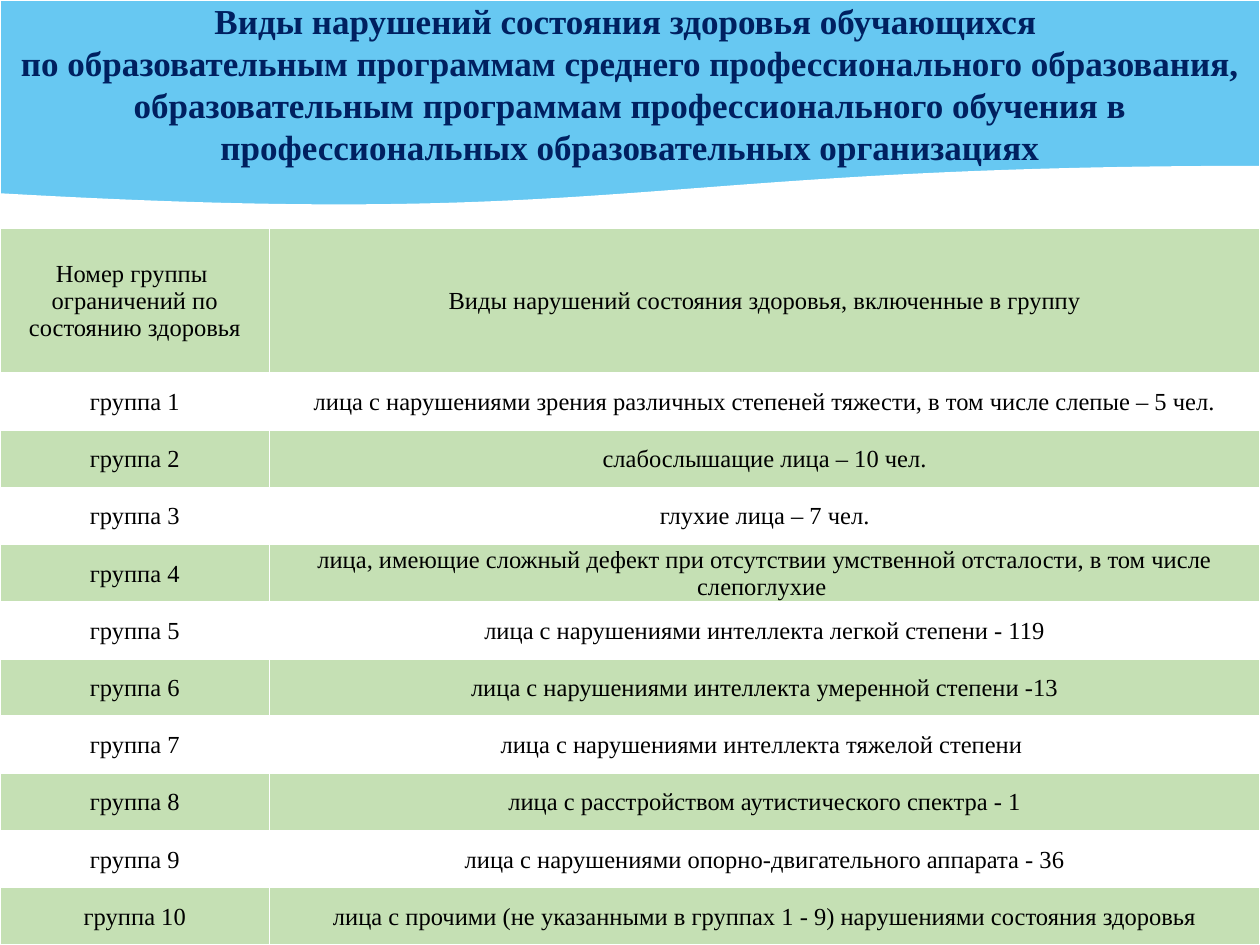
from lxml import etree
from pptx import Presentation
from pptx.dml.color import RGBColor
from pptx.enum.shapes import MSO_SHAPE
from pptx.enum.text import MSO_ANCHOR, MSO_AUTO_SIZE, PP_ALIGN
from pptx.oxml.ns import qn
from pptx.util import Inches, Pt

WAVE = MSO_SHAPE.FLOWCHART_DOCUMENT
MIDDLE = MSO_ANCHOR.MIDDLE
CENTER = PP_ALIGN.CENTER
NO_FIT = MSO_AUTO_SIZE.NONE
COLORS = {"sky": "67C8F2", "navy": "002060", "green": "C5E0B4",
          "white": "FFFFFF", "black": "000000"}
FONT = "Times New Roman"

HEADING = [
    "Виды нарушений состояния здоровья обучающихся ",
    "по образовательным программам среднего профессионального образования, "
    "образовательным программам профессионального обучения в "
    "профессиональных образовательных организациях",
]
HEADER = [
    ["Номер группы ", "ограничений по состоянию здоровья"],
    ["Виды нарушений состояния здоровья, включенные в группу"],
]
IMPAIRMENTS = [
    "лица с нарушениями зрения различных степеней тяжести, в том числе слепые – 5 чел.",
    "слабослышащие лица – 10 чел.",
    "глухие лица – 7 чел.",
    "лица, имеющие сложный дефект при отсутствии умственной отсталости, "
    "в том числе слепоглухие ",
    "лица с нарушениями интеллекта легкой степени - 119",
    "лица с нарушениями интеллекта умеренной степени -13",
    "лица с нарушениями интеллекта тяжелой степени ",
    "лица с расстройством аутистического спектра - 1",
    "лица с нарушениями опорно-двигательного аппарата - 36",
    "лица с прочими (не указанными в группах 1 - 9) нарушениями состояния здоровья",
]


def write(frame, lines, size, color, bold=False):
    """Fill a text frame with centred paragraphs, one per line."""
    for index, line in enumerate(lines):
        paragraph = frame.paragraphs[0] if index == 0 else frame.add_paragraph()
        paragraph.alignment = CENTER
        run = paragraph.add_run()
        run.text = line
        run.font.name = FONT
        run.font.size = Pt(size)
        run.font.bold = bold
        run.font.color.rgb = RGBColor.from_string(COLORS[color])


def add_borders(cell, color, width):
    properties = cell._tc.get_or_add_tcPr()
    for side in ("a:lnL", "a:lnR", "a:lnT", "a:lnB"):
        line = etree.SubElement(properties, qn(side), w=str(Pt(width)))
        fill = etree.SubElement(line, qn("a:solidFill"))
        etree.SubElement(fill, qn("a:srgbClr"), val=COLORS[color])


prs = Presentation()
prs.slide_width, prs.slide_height = Inches(10), Inches(7.5)
slide = prs.slides.add_slide(prs.slide_layouts[5])

# Wavy band, placed behind the title
band = slide.shapes.add_shape(WAVE, 0, 0, Inches(10), Inches(1.65))
band.shadow.inherit = False
band.fill.solid()
band.fill.fore_color.rgb = RGBColor.from_string(COLORS["sky"])
band.line.color.rgb = RGBColor.from_string(COLORS["white"])
band.line.width = Pt(1)
title = slide.shapes.title
title._element.addprevious(band._element)

# Title fills the part of the band above the wave
title.left, title.top, title.width, title.height = 0, 0, Inches(10), Inches(1.32)
heading = title.text_frame
heading.word_wrap = True
heading.auto_size = NO_FIT
heading.vertical_anchor = MIDDLE
heading.margin_top = heading.margin_bottom = Inches(0.05)
write(heading, HEADING, size=20, color="navy", bold=True)

# Table of groups
rows = [HEADER] + [[[f"группа {number}"], [impairment]]
                   for number, impairment in enumerate(IMPAIRMENTS, 1)]
header_height, groups_height = Inches(1.15), Inches(4.54)
groups = slide.shapes.add_table(len(rows), 2, 0, Inches(1.81), Inches(10),
                                header_height + groups_height).table
groups.columns[0].width = Inches(2.14)
groups.columns[1].width = Inches(7.86)
for row_index, row in enumerate(rows):
    groups.rows[row_index].height = (
        header_height if row_index == 0 else groups_height // len(IMPAIRMENTS))
    for column_index, lines in enumerate(row):
        cell = groups.cell(row_index, column_index)
        cell.margin_left = cell.margin_right = cell.margin_top = Inches(0.01)
        cell.margin_bottom = 0
        cell.vertical_anchor = MIDDLE
        add_borders(cell, color="white", width=1)
        cell.fill.solid()
        cell.fill.fore_color.rgb = RGBColor.from_string(
            COLORS["white" if row_index % 2 else "green"])
        write(cell.text_frame, lines, size=14, color="black")

prs.save("out.pptx")
